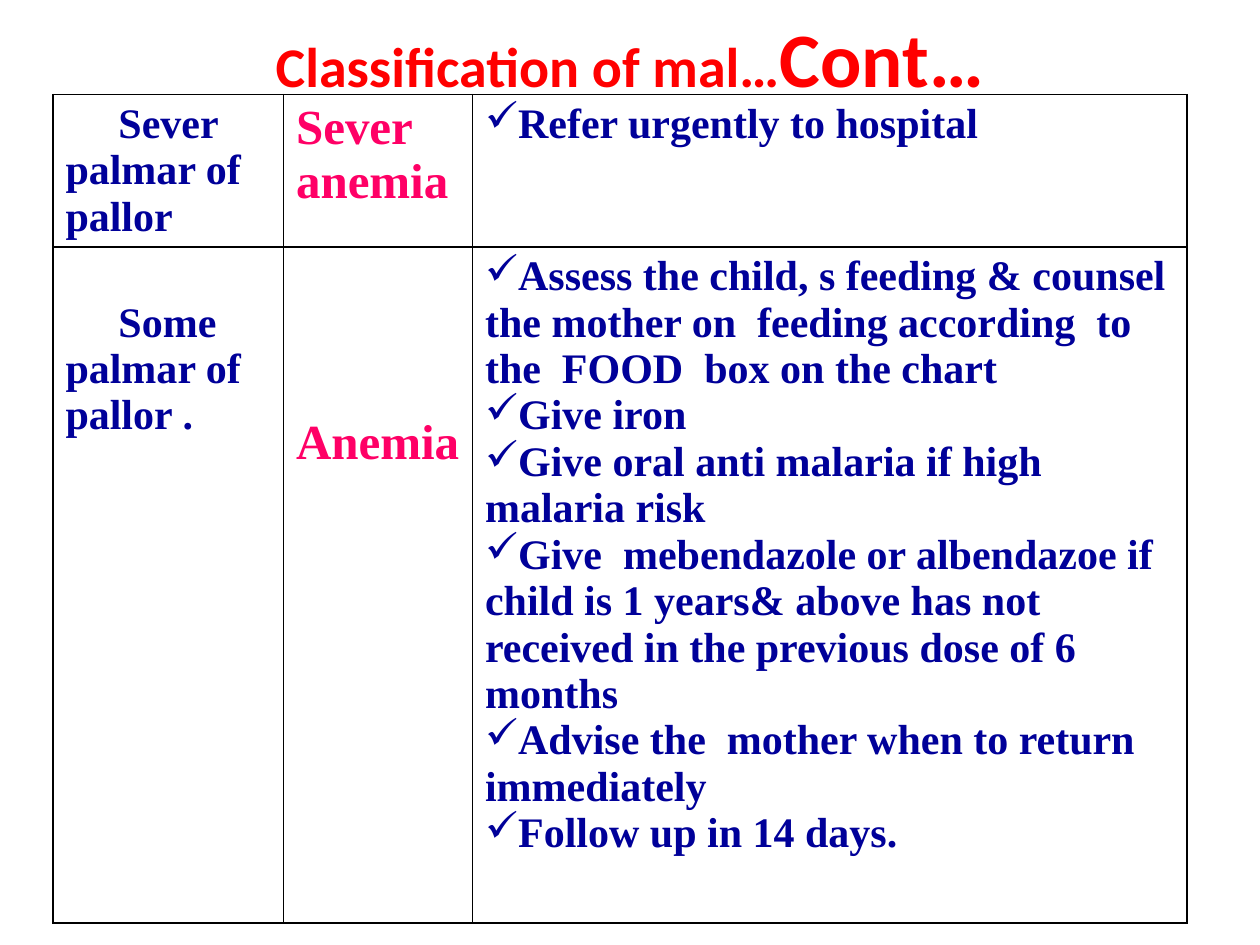
"""Build the anemia classification slide."""
from dataclasses import dataclass

from lxml.etree import SubElement
from pptx import Presentation
from pptx.dml.color import RGBColor as Rgb
from pptx.enum.text import MSO_ANCHOR as Anchor, PP_ALIGN as Align
from pptx.oxml.ns import qn
from pptx.util import Inches, Pt

WIDTH, HEIGHT = Inches(10), Inches(7.5)


@dataclass(frozen=True)
class Theme:
    """Hold the colours, fonts, sizes and line width of the slide."""
    title: str = "FF0000"
    body: str = "000099"
    label: str = "FF0066"
    border: str = "000000"
    title_font: str = "Calibri"
    body_font: str = "Times New Roman"
    title_size: int = 32
    title_large: int = 44
    body_size: int = 24
    label_size: int = 28
    border_width: int = 1


@dataclass(frozen=True)
class Box:
    """Describe a region as shares of the slide's size."""
    left: float
    top: float
    width: float
    height: float

    def lengths(self):
        """Return left, top, width and height as lengths."""
        return (int(self.left * WIDTH), int(self.top * HEIGHT),
                int(self.width * WIDTH), int(self.height * HEIGHT))


THEME = Theme()
TITLE_BOX = Box(0.05, -0.023, 0.9, 0.167)
TABLE_BOX = Box(0.042, 0.1, 0.9, 0.877)
COLUMN_SHARES = (1.83 / 9, 1.5 / 9, 5.67 / 9)
ROW_SHARES = (1.21 / 6.58, 5.37 / 6.58)
SIDE_MARGIN, TOP_MARGIN, FIRST_INDENT = 0.1, 0.05, 0.42
LINE_HEIGHT = 1.107 / 72

FINDING = {"size": THEME.body_size, "color": THEME.body, "indent": FIRST_INDENT}
LABEL = {"size": THEME.label_size, "color": THEME.label}
ACTION = {"size": THEME.body_size, "color": THEME.body, "bullet": "✓"}
COLUMN_FORMATS = (FINDING, LABEL, ACTION)

ROWS = (
    (("Sever palmar of pallor",), ("Sever anemia",),
     ("Refer urgently to hospital",)),
    (("Some palmar of pallor .",), ("Anemia",),
     ("Assess the child, s feeding & counsel the mother on  feeding "
      "according  to the  FOOD  box on the chart",
      "Give iron",
      "Give oral anti malaria if high malaria risk",
      "Give  mebendazole or albendazoe if child is 1 years& above has not "
      "received in the previous dose of 6 months",
      "Advise the  mother when to return immediately",
      "Follow up in 14 days.")),
)
LINES_ABOVE = ((0, 0, 0), (1, 3, 0))


def set_all(target, values):
    """Set each named attribute of the target."""
    for name, value in values.items():
        setattr(target, name, value)


def add_span(para, text, font, size, color):
    """Append a bold run to a paragraph."""
    span = para.add_run()
    span.text = text
    set_all(span.font, {"name": font, "size": Pt(size), "bold": True})
    span.font.color.rgb = Rgb.from_string(color)


def format_para(para, indent=0, bullet=None):
    """Set the first-line indent and the bullet of a paragraph."""
    properties = para._p.get_or_add_pPr()
    properties.set("marL", "0")
    properties.set("indent", str(Inches(indent)))
    if bullet:
        SubElement(properties, qn("a:buChar"), char=bullet)
    else:
        SubElement(properties, qn("a:buNone"))


def add_borders(cell):
    """Draw a solid line on all four sides of a cell."""
    properties = cell._tc.get_or_add_tcPr()
    for place, side in enumerate(("lnL", "lnR", "lnT", "lnB")):
        line = properties.makeelement(
            qn(f"a:{side}"), {"w": str(Pt(THEME.border_width))})
        fill = SubElement(line, qn("a:solidFill"))
        SubElement(fill, qn("a:srgbClr"), val=THEME.border)
        properties.insert(place, line)


def fill_cell(cell, texts, style, lines_above):
    """Write the paragraphs of a cell below a number of free lines."""
    style = dict(style)
    size, color = style.pop("size"), style.pop("color")
    top = TOP_MARGIN + lines_above * size * LINE_HEIGHT
    set_all(cell, {
        "margin_left": Inches(SIDE_MARGIN),
        "margin_right": Inches(SIDE_MARGIN),
        "margin_top": Inches(top),
        "margin_bottom": Inches(TOP_MARGIN),
        "vertical_anchor": Anchor.TOP,
    })
    cell.fill.background()
    add_borders(cell)
    frame = cell.text_frame
    for number, text in enumerate(texts):
        para = frame.add_paragraph() if number else frame.paragraphs[0]
        format_para(para, **style)
        add_span(para, text, THEME.body_font, size, color)


def place_title(page, box):
    """Place and format the title."""
    title = page.shapes.title
    set_all(title, dict(zip(("left", "top", "width", "height"), box.lengths())))
    frame = title.text_frame
    set_all(frame, {"word_wrap": True, "vertical_anchor": Anchor.MIDDLE})
    para = frame.paragraphs[0]
    para.alignment = Align.CENTER
    for text, size in (("Classification of mal…", THEME.title_size),
                       ("Cont…", THEME.title_large)):
        add_span(para, text, THEME.title_font, size, THEME.title)


def place_table(page, box):
    """Place the table of findings, classes and actions."""
    left, top, width, height = box.lengths()
    table = page.shapes.add_table(
        len(ROWS), len(COLUMN_SHARES), left, top, width, height).table
    set_all(table, {"first_row": False, "horz_banding": False})
    for column, share in zip(table.columns, COLUMN_SHARES):
        column.width = int(width * share)
    for row, share, contents, gaps in zip(
            table.rows, ROW_SHARES, ROWS, LINES_ABOVE):
        row.height = int(height * share)
        for cell, texts, style, gap in zip(
                row.cells, contents, COLUMN_FORMATS, gaps):
            fill_cell(cell, texts, style, gap)


def main():
    """Build and save the deck."""
    deck = Presentation()
    set_all(deck, {"slide_width": WIDTH, "slide_height": HEIGHT})
    page = deck.slides.add_slide(deck.slide_layouts[5])
    place_title(page, TITLE_BOX)
    place_table(page, TABLE_BOX)
    deck.save("out.pptx")


if __name__ == "__main__":
    main()
